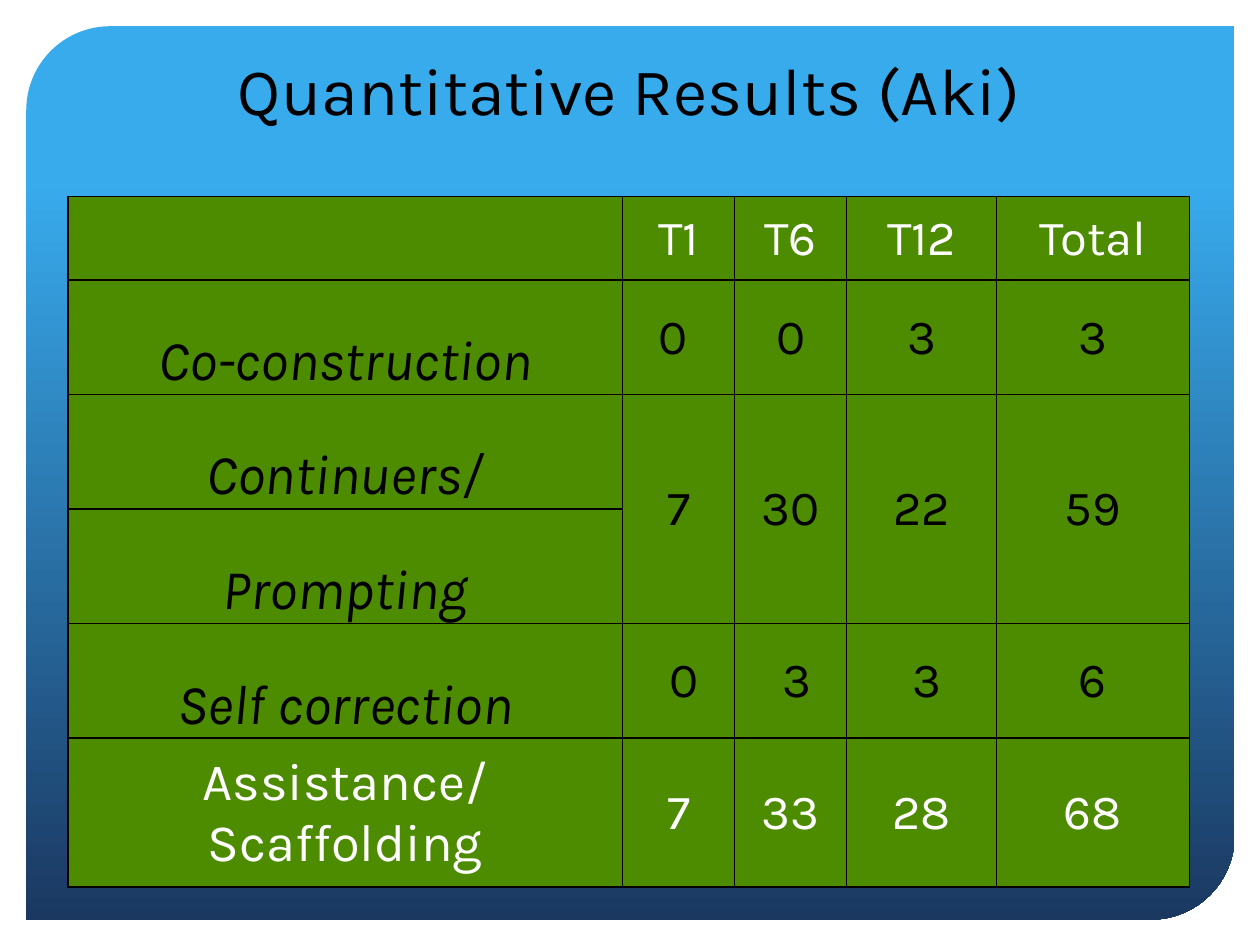
from lxml.etree import SubElement
from pptx import Presentation
from pptx.dml.color import RGBColor
from pptx.enum.shapes import MSO_SHAPE
from pptx.enum.text import MSO_ANCHOR, PP_ALIGN
from pptx.oxml.ns import qn
from pptx.util import Cm, Pt

FONT = "Karla"
COLORS = {
    "sky": "38ABED",
    "navy": "1B3861",
    "green": "4D8B00",
    "black": "000000",
    "white": "FFFFFF",
}
COLUMN_WIDTHS = [11.18, 2.26, 2.26, 3.02, 3.89]
ROW_HEIGHTS = [1.68, 2.31, 2.31, 2.31, 2.31, 3.0]
# Non-breaking spaces nudge some of the centred figures sideways
RESULTS = [
    ["", "T1", "T6", "T12", "Total"],
    ["Co-construction", "0 ", "0", "3", "3"],
    ["Continuers/", "7", "30", "22", "59"],
    ["Prompting", "", "", "", ""],
    ["Self correction", " 0", " 3", " 3", "6"],
    ["Assistance/Scaffolding", "7", "33", "28", "68"],
]
LAST_ROW = len(RESULTS) - 1


def color(name):
    return RGBColor.from_string(COLORS[name])


def format_text(frame, size, color_name, italic=False):
    for para in frame.paragraphs:
        para.alignment = PP_ALIGN.CENTER
        for span in para.runs:
            span.font.name = FONT
            span.font.size = Pt(size)
            span.font.italic = italic
            span.font.color.rgb = color(color_name)


def add_panel(page):
    panel = page.shapes.add_shape(
        MSO_SHAPE.ROUND_2_DIAG_RECTANGLE, Cm(0.53), Cm(0.53), Cm(24.36), Cm(18.01))
    panel.adjustments[0] = 0.094
    panel.adjustments[1] = 0
    panel.shadow.inherit = False
    panel.line.fill.background()
    panel.fill.gradient()
    panel.fill.gradient_angle = 270
    stops = [(0.17, "sky"), (1, "navy")]
    for stop, (position, name) in zip(panel.fill.gradient_stops, stops):
        stop.position = position
        stop.color.rgb = color(name)


def add_title(page, text):
    box = page.shapes.add_textbox(Cm(2.16), Cm(1.07), Cm(21.06), Cm(1.65))
    frame = box.text_frame
    frame.word_wrap = True
    frame.vertical_anchor = MSO_ANCHOR.BOTTOM
    frame.text = text
    format_text(frame, 38, "black")


def add_borders(cell):
    properties = cell._tc.get_or_add_tcPr()
    for side in ("a:lnL", "a:lnR", "a:lnT", "a:lnB"):
        line = SubElement(properties, qn(side), w=str(Pt(1)))
        fill = SubElement(line, qn("a:solidFill"))
        SubElement(fill, qn("a:srgbClr"), val=COLORS["black"])


def format_cell(cell, row, column):
    is_label = column == 0
    is_category = is_label and 0 < row < LAST_ROW
    add_borders(cell)
    cell.fill.solid()
    cell.fill.fore_color.rgb = color("green")
    cell.margin_left = cell.margin_right = cell.margin_top = Cm(0.03)
    cell.margin_bottom = 0
    cell.vertical_anchor = MSO_ANCHOR.BOTTOM if is_category else MSO_ANCHOR.MIDDLE
    size = 32 if is_category else 30 if is_label else 28
    name = "white" if row in (0, LAST_ROW) else "black"
    format_text(cell.text_frame, size, name, is_category)


def add_results_table(page):
    frame = page.shapes.add_table(
        len(RESULTS), len(COLUMN_WIDTHS), Cm(1.37), Cm(3.96),
        Cm(sum(COLUMN_WIDTHS)), Cm(sum(ROW_HEIGHTS)))
    table = frame.table
    table.first_row = table.horz_banding = False
    for column, width in zip(table.columns, COLUMN_WIDTHS):
        column.width = Cm(width)
    for row, height in zip(table.rows, ROW_HEIGHTS):
        row.height = Cm(height)
    for row, texts in enumerate(RESULTS):
        for column, text in enumerate(texts):
            cell = table.cell(row, column)
            cell.text_frame.text = text
            format_cell(cell, row, column)
    # Continuers and Prompting share their figures
    for column in range(1, len(COLUMN_WIDTHS)):
        table.cell(2, column).merge(table.cell(3, column))


def main():
    deck = Presentation()
    deck.slide_width, deck.slide_height = Cm(25.4), Cm(19.05)
    page = deck.slides.add_slide(deck.slide_layouts[6])
    add_panel(page)
    add_title(page, "Quantitative Results (Aki)")
    add_results_table(page)
    deck.save("out.pptx")


if __name__ == "__main__":
    main()
